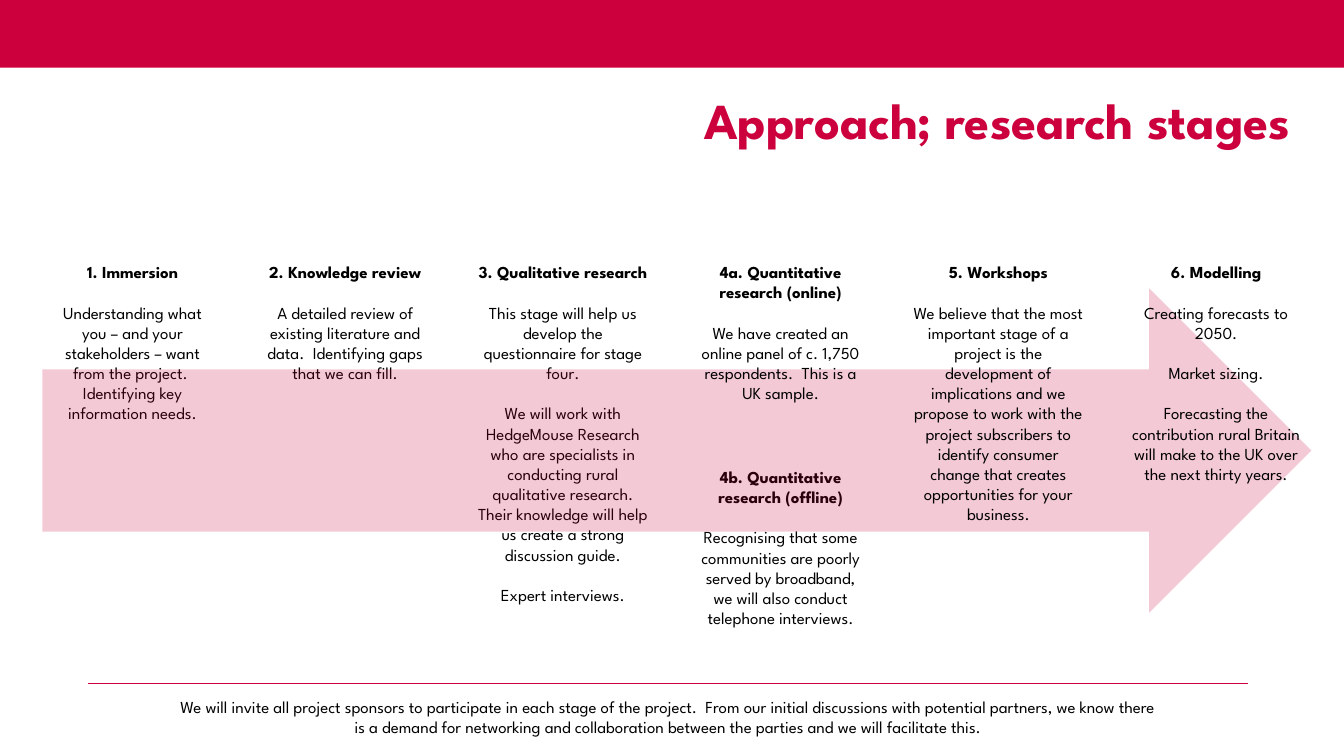
from lxml import etree
from pptx import Presentation
from pptx.dml.color import RGBColor
from pptx.enum import shapes, text
from pptx.oxml import ns
from pptx.util import Pt

# Content
TITLE = "Approach; research stages"
# Column, top, height, heading, paragraphs
STAGES_BEHIND_ARROW = [
    (0, 183.6, 138, "1. Immersion", [
        "Understanding what you – and your stakeholders – want from the project.  "
        "Identifying key information needs."]),
    (1, 183.6, 131, "2. Knowledge review", [
        "A detailed review of existing literature and data.  "
        "Identifying gaps that we can fill."]),
    (2, 183.6, 351, "3. Qualitative research", [
        "This stage will help us develop the questionnaire for stage four.",
        "We will work with HedgeMouse Research who are specialists in conducting "
        "rural qualitative research. Their knowledge will help us create a strong "
        "discussion guide.",
        "Expert interviews."]),
    (3, 329.8, 174, "4b. Quantitative research (offline)", [
        "Recognising that some communities are poorly served by broadband, "
        "we will also conduct telephone interviews."]),
]
STAGES_ON_ARROW = [
    (3, 183.6, 124, "4a. Quantitative research (online)", [
        "We have created an online panel of c. 1,750 respondents.  "
        "This is a UK sample."]),
    (4, 183.6, 211, "5. Workshops", [
        "We believe that the most important stage of a project is the development "
        "of implications and we propose to work with the project subscribers to "
        "identify consumer change that creates opportunities for your business."]),
    (5, 183.6, 181, "6. Modelling", [
        "Creating forecasts to 2050.",
        "Market sizing.",
        "Forecasting the contribution rural Britain will make to the UK over "
        "the next thirty years."]),
]
FOOTER = [
    "We will invite all project sponsors to participate in each stage of the project.  "
    "From our initial discussions with potential partners, we know there",
    "is a demand for networking and collaboration between the parties "
    "and we will facilitate this.",
]

THEME = {
    "font": "League Spartan",
    "red": RGBColor(0xCB, 0x00, 0x3D),
    "black": RGBColor(0, 0, 0),
    "title_size": 36,
    "body_size": 12,
    "arrow_alpha": 21,
}

# Layout, in points
SLIDE_WIDTH, SLIDE_HEIGHT = 960, 540
BANNER_HEIGHT = 48.4
CONTENT_LEFT = 30.24
COLUMN_LEFT, COLUMN_PITCH, COLUMN_WIDTH = 23.04, 155.52, 136.08
BLANK_LINE = 14.4

presentation = Presentation()
presentation.slide_width = Pt(SLIDE_WIDTH)
presentation.slide_height = Pt(SLIDE_HEIGHT)
slide = presentation.slides.add_slide(presentation.slide_layouts[6])


def add_text(lines, left, top, width, height, size=THEME["body_size"],
             color=THEME["black"], align=text.PP_ALIGN.CENTER, bold_first=False,
             gap=0, line_spacing=1.0):
    box = slide.shapes.add_textbox(Pt(left), Pt(top), Pt(width), Pt(height))
    frame = box.text_frame
    frame.word_wrap = True
    for index, line in enumerate(lines):
        paragraph = frame.paragraphs[0] if index == 0 else frame.add_paragraph()
        paragraph.alignment = align
        paragraph.line_spacing = line_spacing
        paragraph.space_before = Pt(gap if index else 0)
        run = paragraph.add_run()
        run.text = line
        run.font.name = THEME["font"]
        run.font.size = Pt(size)
        run.font.bold = bold_first and index == 0
        run.font.color.rgb = color
    return box


def add_filled_shape(kind, left, top, width, height):
    shape = slide.shapes.add_shape(kind, Pt(left), Pt(top), Pt(width), Pt(height))
    shape.shadow.inherit = False
    shape.fill.solid()
    shape.fill.fore_color.rgb = THEME["red"]
    shape.line.fill.background()
    return shape


def add_stages(stages):
    for column, top, height, heading, paragraphs in stages:
        right = COLUMN_LEFT + column * COLUMN_PITCH + COLUMN_WIDTH
        left = max(CONTENT_LEFT, right - COLUMN_WIDTH)
        add_text([heading] + paragraphs, left, top, right - left, height,
                 bold_first=True, gap=BLANK_LINE)


# Banner and title
add_filled_shape(shapes.MSO_SHAPE.RECTANGLE, 0, 0, SLIDE_WIDTH, BANNER_HEIGHT)
add_text([TITLE], 412.6, 64.8, 516.2, 85.7, size=THEME["title_size"],
         color=THEME["red"], align=text.PP_ALIGN.RIGHT, bold_first=True,
         line_spacing=0.9)

# Stages with the translucent arrow between the two layers
add_stages(STAGES_BEHIND_ARROW)
arrow = add_filled_shape(shapes.MSO_SHAPE.RIGHT_ARROW, CONTENT_LEFT, 205.9, 906.5, 231.8)
arrow_color = arrow.fill._xPr.find(".//" + ns.qn("a:srgbClr"))
etree.SubElement(arrow_color, ns.qn("a:alpha"), val=str(THEME["arrow_alpha"] * 1000))
add_stages(STAGES_ON_ARROW)

# Footer and its rule
add_text(FOOTER, 56.2, 493.9, 842.4, 36)
rule = slide.shapes.add_connector(shapes.MSO_CONNECTOR.STRAIGHT,
                                  Pt(63), Pt(488.2), Pt(891.4), Pt(488.2))
rule.line.color.rgb = THEME["red"]
rule.line.width = Pt(0.5)
etree.SubElement(rule._element.spPr, ns.qn("a:effectLst"))

presentation.save("out.pptx")
